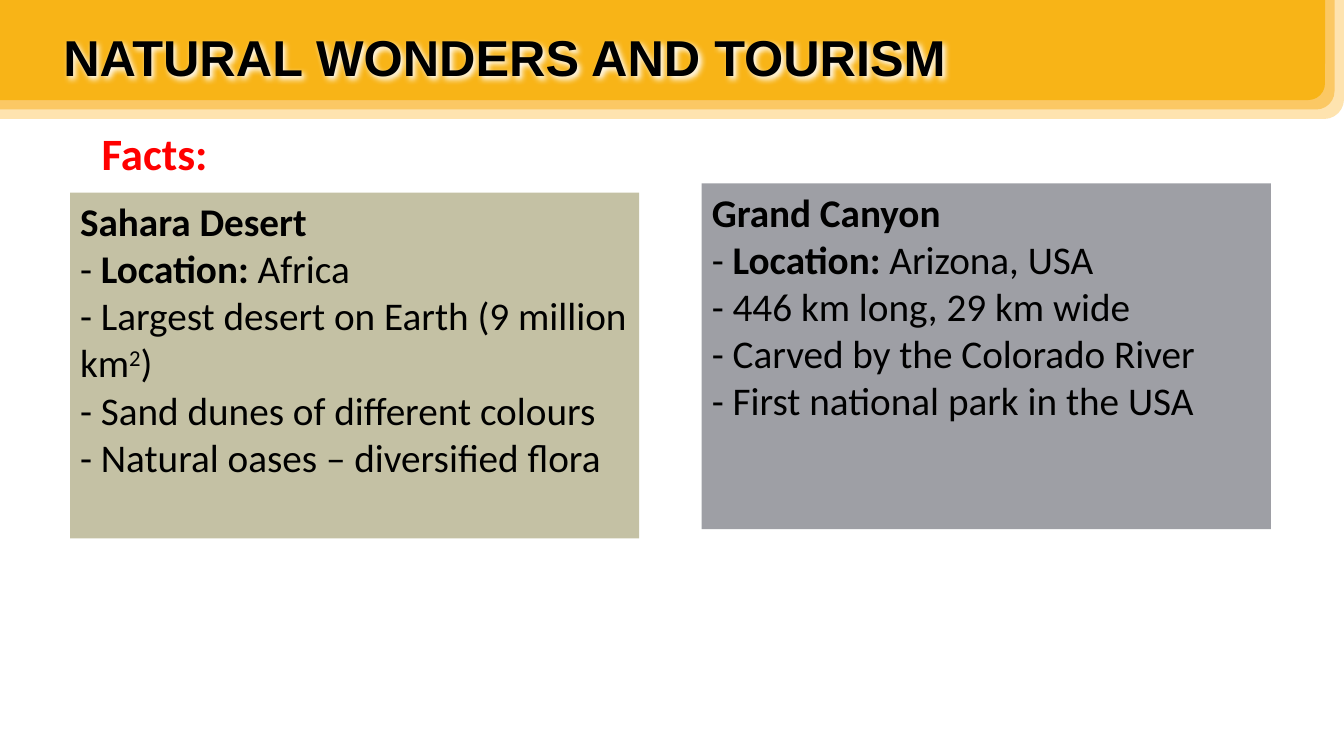
from dataclasses import dataclass

import pptx
import pptx.dml.color
import pptx.enum.shapes
import pptx.enum.text
import pptx.oxml
import pptx.oxml.ns
import pptx.util

Pt = pptx.util.Pt
RGBColor = pptx.dml.color.RGBColor
PP_ALIGN = pptx.enum.text.PP_ALIGN

BLACK = RGBColor(0, 0, 0)
RED = RGBColor(0xFF, 0, 0)
SAND = RGBColor(0xC4, 0xC1, 0xA4)
STONE = RGBColor(0x9E, 0x9F, 0xA5)
CREAM = RGBColor(0xFE, 0xE3, 0xAF)
APRICOT = RGBColor(0xFB, 0xC8, 0x64)
AMBER = RGBColor(0xF8, 0xB4, 0x17)


@dataclass(frozen=True)
class Piece:
    text: str
    bold: bool = False
    raised: bool = False


@dataclass(frozen=True)
class Panel:
    idx: int
    left: float
    top: float
    fill: RGBColor
    align: PP_ALIGN
    lines: list[list[Piece]]


BAND_COLORS = [CREAM, APRICOT, AMBER]
BAND_STEP = 6.75

PANELS = [
    Panel(1, 50, 137.5, SAND, PP_ALIGN.LEFT, [
        [Piece("Sahara Desert", bold=True)],
        [Piece("- "), Piece("Location: ", bold=True), Piece("Africa")],
        [Piece("- Largest desert on Earth (9 million km"),
         Piece("2", raised=True), Piece(")")],
        [Piece("- Sand dunes of different colours")],
        [Piece("- Natural oases – diversified flora")],
    ]),
    Panel(2, 501.25, 131, STONE, PP_ALIGN.JUSTIFY, [
        [Piece("Grand Canyon", bold=True)],
        [Piece("- "), Piece("Location:", bold=True), Piece(" Arizona, USA")],
        [Piece("- 446 km long, 29 km wide")],
        [Piece("- Carved by the Colorado River")],
        [Piece("- First national park in the USA")],
    ]),
]


def place(sp, left: float, top: float, width: float, height: float) -> None:
    sp.left, sp.top, sp.width, sp.height = map(Pt, (left, top, width, height))


def set_font(font, name: str, size: float, color: RGBColor, bold: bool) -> None:
    font.name = name
    font.size = Pt(size)
    font.bold = bold
    font.color.rgb = color


def set_frame(tf) -> None:
    tf.word_wrap = True
    tf.auto_size = pptx.enum.text.MSO_AUTO_SIZE.NONE
    tf.vertical_anchor = pptx.enum.text.MSO_ANCHOR.TOP


def draw_bands(slide) -> None:
    for i, color in enumerate(BAND_COLORS):
        sp = slide.shapes.add_shape(
            pptx.enum.shapes.MSO_SHAPE.ROUND_1_RECTANGLE, 0, 0,
            Pt(960 - i * BAND_STEP), Pt(85 - i * BAND_STEP))
        sp.shadow.inherit = False
        sp.fill.solid()
        sp.fill.fore_color.rgb = color
        sp.line.fill.background()
        sp.element.spPr.get_or_add_xfrm().set("flipV", "1")
        slide.shapes.element.insert(2 + i, sp.element)


def draw_title(slide) -> None:
    sp = slide.shapes.title
    place(sp, 38, 15, 890, 51)
    sp.text_frame.text = "NATURAL WONDERS AND TOURISM"
    set_frame(sp.text_frame)
    p = sp.text_frame.paragraphs[0]
    p.alignment = PP_ALIGN.LEFT
    set_font(p.runs[0].font, "Arial", 36, BLACK, True)
    sp.element.spPr.append(pptx.oxml.parse_xml(
        f'<a:effectLst {pptx.oxml.ns.nsdecls("a")}>'
        '<a:outerShdw blurRad="50800" dist="25400" dir="2700000" algn="tl">'
        '<a:srgbClr val="FFFFFF"/></a:outerShdw></a:effectLst>'))


def draw_facts_label(slide) -> None:
    sp = slide.shapes.add_textbox(Pt(65.5), Pt(86), Pt(110), Pt(46))
    sp.text_frame.text = "Facts:"
    set_frame(sp.text_frame)
    p = sp.text_frame.paragraphs[0]
    p.alignment = PP_ALIGN.JUSTIFY
    set_font(p.runs[0].font, "Calibri", 32, RED, True)


def draw_panel(slide, panel: Panel) -> None:
    sp = slide.placeholders[panel.idx]
    place(sp, panel.left, panel.top, 406.5, 247)
    sp.fill.solid()
    sp.fill.fore_color.rgb = panel.fill
    tf = sp.text_frame
    set_frame(tf)
    for i, line in enumerate(panel.lines):
        p = tf.add_paragraph() if i else tf.paragraphs[0]
        pPr = p._p.get_or_add_pPr()
        pPr.set("marL", "0")
        pPr.set("indent", "0")
        pPr.append(pptx.oxml.parse_xml(
            f'<a:buNone {pptx.oxml.ns.nsdecls("a")}/>'))
        p.alignment = panel.align
        p.space_before = Pt(0)
        for piece in line:
            r = p.add_run()
            r.text = piece.text
            set_font(r.font, "Calibri", 28, BLACK, piece.bold)
            if piece.raised:
                r.font._element.set("baseline", "30000")


def main() -> None:
    prs = pptx.Presentation()
    prs.slide_width, prs.slide_height = Pt(960), Pt(540)
    slide = prs.slides.add_slide(prs.slide_layouts.get_by_name("Two Content"))
    draw_bands(slide)
    draw_title(slide)
    draw_facts_label(slide)
    for panel in PANELS:
        draw_panel(slide, panel)
    prs.save("out.pptx")


if __name__ == "__main__":
    main()
